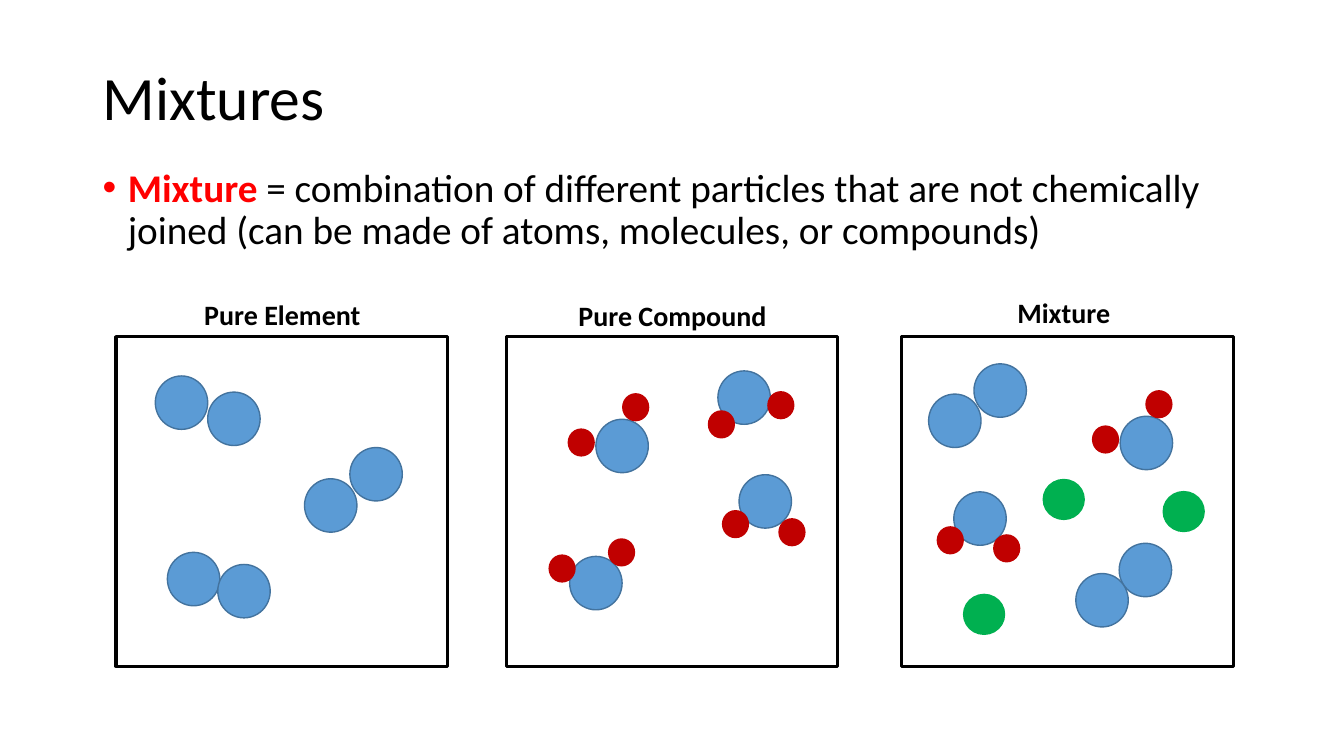
from dataclasses import dataclass

from lxml import etree
from pptx import Presentation
from pptx import util as u
from pptx.dml.color import RGBColor
from pptx.enum import shapes, text
from pptx.oxml.ns import qn

BLACK = RGBColor(0x00, 0x00, 0x00)
RED = RGBColor(0xFF, 0x00, 0x00)
BLUE = RGBColor(0x5B, 0x9B, 0xD5)
BLUE_EDGE = RGBColor(0x43, 0x73, 0x9E)
DARK_RED = RGBColor(0xC0, 0x00, 0x00)
GREEN = RGBColor(0x00, 0xB0, 0x50)

SLIDE_WIDTH, SLIDE_HEIGHT = u.Inches(13.33), u.Inches(7.5)
COLUMN = SLIDE_WIDTH / 133.3
ROW = SLIDE_HEIGHT / 75

MARGIN, TEXT_WIDTH = 9.2, 115
PANEL_TOP, PANEL_WIDTH, PANEL_HEIGHT = 33.4, 32.9, 32.7
LABEL_WIDTH, LABEL_HEIGHT = 28.2, 4.4

Spot = tuple[float, float]


@dataclass(frozen=True)
class Atom:
    width: float
    height: float
    fill: RGBColor
    edge: RGBColor | None = None


@dataclass(frozen=True)
class Panel:
    label: str
    left: float
    label_at: Spot
    atoms: list[tuple[Atom, list[Spot]]]


@dataclass(frozen=True)
class Words:
    content: str
    size: float
    color: RGBColor = BLACK
    bold: bool = False


LARGE = Atom(5.2, 5.3, BLUE, BLUE_EDGE)
SMALL = Atom(2.7, 2.8, DARK_RED)
SINGLE = Atom(4.2, 4.1, GREEN)

PANELS = [
    Panel("Pure Element", 11.5, (2.4, -4.4), [
        (LARGE, [(3.9, 3.9), (23.2, 11), (18.7, 14.1),
                 (9.1, 5.5), (5.1, 21.4), (10.1, 22.6)]),
    ]),
    Panel("Pure Compound", 50.2, (2.4, -4.3), [
        (LARGE, [(8.9, 8.2), (6.3, 21.8), (23.1, 13.7), (21, 3.4)]),
        (SMALL, [(6.1, 9.1), (11.5, 5.6), (20, 7.3), (25.9, 5.4),
                 (4.2, 21.6), (10.1, 20), (21.4, 17.2), (27, 18)]),
    ]),
    Panel("Mixture", 89.4, (2, -4.6), [
        (LARGE, [(7.2, 2.7), (2.7, 5.7), (21.6, 20.5),
                 (17.3, 23.5), (21.7, 7.9), (5.2, 15.4)]),
        (SMALL, [(18.9, 8.8), (24.2, 5.3), (3.5, 18.8), (9.1, 19.6)]),
        (SINGLE, [(14, 14.1), (25.9, 15.3), (6.1, 25.5)]),
    ]),
]


def cells(left: float, top: float, width: float, height: float) -> list[int]:
    return [round(left * COLUMN), round(top * ROW),
            round(width * COLUMN), round(height * ROW)]


def apply(target, values: dict) -> None:
    for name, value in values.items():
        setattr(target, name, value)


def add_words(page, place: list[int], spans: list[Words],
              frame_format: dict, para_format: dict):
    box = page.shapes.add_textbox(*place)
    apply(box.text_frame, {"word_wrap": True, **frame_format})
    para = box.text_frame.paragraphs[0]
    apply(para, para_format)
    for words in spans:
        span = para.add_run()
        span.text = words.content
        apply(span.font, {"name": "Calibri", "size": u.Pt(words.size),
                          "bold": words.bold})
        span.font.color.rgb = words.color
    return para


def add_bullet(para, color: RGBColor) -> None:
    properties = para._p.get_or_add_pPr()
    indent = u.Inches(0.25)
    properties.set("marL", str(indent))
    properties.set("indent", str(-indent))
    tint = etree.SubElement(properties, qn("a:buClr"))
    etree.SubElement(tint, qn("a:srgbClr"), val=str(color))
    etree.SubElement(properties, qn("a:buFont"), typeface="Arial")
    etree.SubElement(properties, qn("a:buChar"), char="•")


def add_outline(page, kind, place: list[int], fill: RGBColor | None,
                edge: RGBColor | None, weight: float) -> None:
    shape = page.shapes.add_shape(kind, *place)
    shape.shadow.inherit = False
    if fill is None:
        shape.fill.background()
    else:
        shape.fill.solid()
        shape.fill.fore_color.rgb = fill
    if edge is None:
        shape.line.fill.background()
    else:
        shape.line.color.rgb = edge
        shape.line.width = u.Pt(weight)


def add_panel(page, panel: Panel) -> None:
    add_outline(page, shapes.MSO_SHAPE.RECTANGLE,
                cells(panel.left, PANEL_TOP, PANEL_WIDTH, PANEL_HEIGHT),
                None, BLACK, 2.25)
    for atom, spots in panel.atoms:
        for across, down in spots:
            add_outline(page, shapes.MSO_SHAPE.OVAL,
                        cells(panel.left + across, PANEL_TOP + down,
                              atom.width, atom.height),
                        atom.fill, atom.edge, 1)
    across, down = panel.label_at
    add_words(page, cells(panel.left + across, PANEL_TOP + down,
                          LABEL_WIDTH, LABEL_HEIGHT),
              [Words(panel.label, 20, bold=True)],
              {"auto_size": text.MSO_AUTO_SIZE.SHAPE_TO_FIT_TEXT},
              {"alignment": text.PP_ALIGN.CENTER})


def main() -> None:
    deck = Presentation()
    apply(deck, {"slide_width": SLIDE_WIDTH, "slide_height": SLIDE_HEIGHT})
    page = deck.slides.add_slide(deck.slide_layouts[6])
    add_words(page, cells(MARGIN, 2.7, TEXT_WIDTH, 14.5),
              [Words("Mixtures", 44)],
              {"vertical_anchor": text.MSO_ANCHOR.MIDDLE},
              {"line_spacing": 0.9})
    definition = add_words(
        page, cells(MARGIN, 16.2, TEXT_WIDTH, 10.5),
        [Words("Mixture", 28, RED, True),
         Words(" = combination of different particles that are not chemically "
               "joined (can be made of atoms, molecules, or compounds)", 28)],
        {}, {"line_spacing": 0.9, "space_before": u.Pt(10)})
    add_bullet(definition, RED)
    for panel in PANELS:
        add_panel(page, panel)
    deck.save("out.pptx")


if __name__ == "__main__":
    main()
